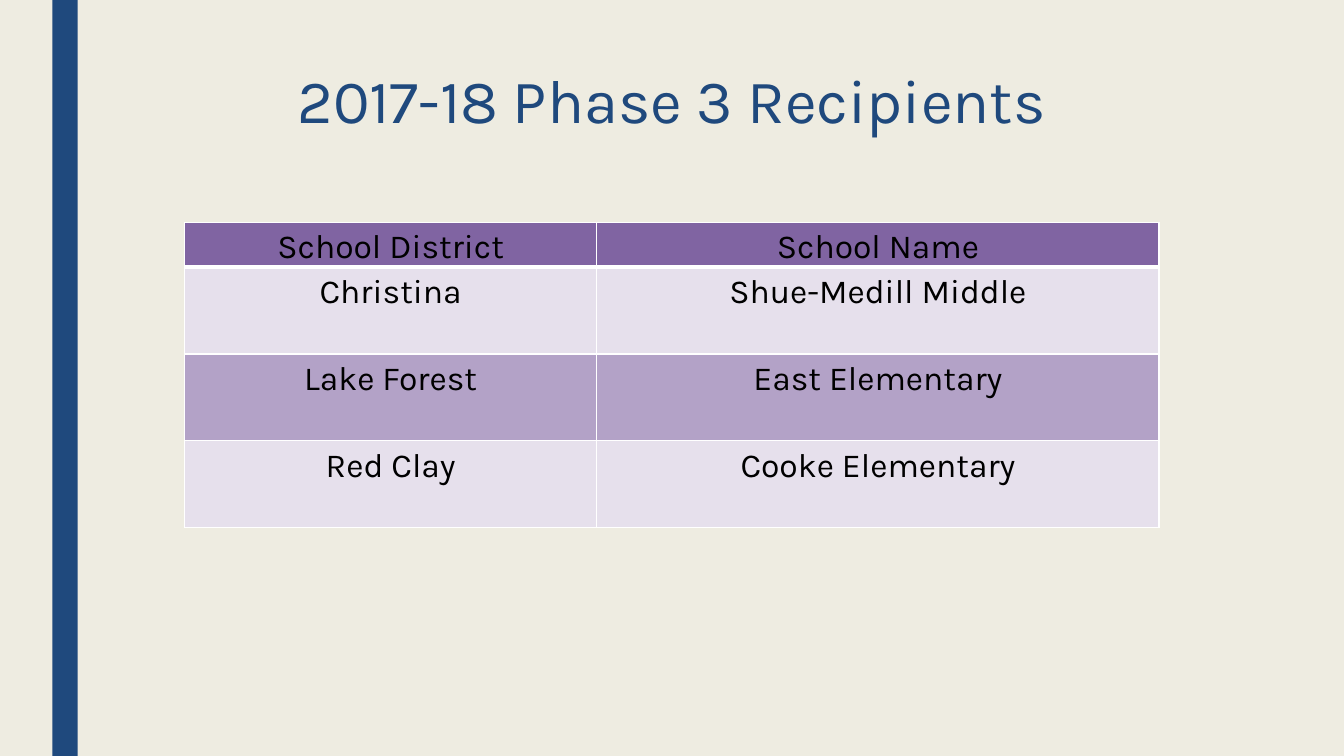
import pptx
import pptx.dml.color
import pptx.enum.shapes
import pptx.enum.text
import pptx.oxml
import pptx.oxml.ns
import pptx.util
from dataclasses import dataclass

Cm = pptx.util.Cm
Pt = pptx.util.Pt
CENTER = pptx.enum.text.PP_ALIGN.CENTER
TOP = pptx.enum.text.MSO_ANCHOR.TOP


@dataclass(frozen=True)
class Theme:
    font: str = "Karla"
    back: str = "EEECE1"
    navy: str = "1F497D"
    ink: str = "000000"
    rule: str = "FFFFFF"
    head: str = "8064A2"
    light: str = "E6E0EC"
    dark: str = "B3A2C7"
    title: int = 44
    body: int = 24


THEME = Theme()
ROWS = [
    ("School District", "School Name"),
    ("Christina", "Shue-Medill Middle"),
    ("Lake Forest", "East Elementary"),
    ("Red Clay", "Cooke Elementary"),
]


def paint(fill, color):
    fill.solid()
    fill.fore_color.rgb = pptx.dml.color.RGBColor.from_string(color)


def write(frame, text, size, color, space):
    frame.text = text
    line = frame.paragraphs[0]
    line.alignment = CENTER
    line.line_spacing = space
    font = line.runs[0].font
    font.name = THEME.font
    font.size = Pt(size)
    font.bold = False
    paint(font.fill, color)


def add_bar(slide, left, top, width, height):
    bar = slide.shapes.add_shape(
        pptx.enum.shapes.MSO_SHAPE.RECTANGLE, left, top, width, height)
    bar.shadow.inherit = False
    paint(bar.fill, THEME.navy)
    bar.line.fill.background()


def add_title(slide, left, top, width, height):
    title = slide.shapes.title
    title.left, title.top, title.width, title.height = left, top, width, height
    frame = title.text_frame
    write(frame, "2017-18 Phase 3 Recipients", THEME.title, THEME.navy, 0.89)
    frame.vertical_anchor = TOP
    frame.word_wrap = True


def add_rules(cell, base):
    """Border the cell; base is the width of its lower rule in points."""
    props = cell._tc.get_or_add_tcPr()
    sides = {"lnL": 1, "lnR": 1, "lnT": 1, "lnB": base}
    for place, (side, width) in enumerate(sides.items()):
        props.insert(place, pptx.oxml.parse_xml(
            f'<a:{side} {pptx.oxml.ns.nsdecls("a")} w="{Pt(width)}">'
            f'<a:solidFill><a:srgbClr val="{THEME.rule}"/></a:solidFill>'
            f'</a:{side}>'))


def add_grid(slide, left, top, width, height):
    grid = slide.shapes.add_table(
        len(ROWS), len(ROWS[0]), left, top, width, height).table
    grid.first_row = True
    grid.horz_banding = False

    # Column and row sizes
    first = Cm(10.39)
    grid.columns[0].width = first
    grid.columns[1].width = width - first
    head = Cm(1.13)
    grid.rows[0].height = head
    for row in list(grid.rows)[1:]:
        row.height = (height - head) // (len(ROWS) - 1)

    # Header, then alternating bands
    for r, texts in enumerate(ROWS):
        color = THEME.head if r == 0 else (THEME.dark, THEME.light)[r % 2]
        for c, text in enumerate(texts):
            cell = grid.cell(r, c)
            cell.margin_left = cell.margin_right = Cm(0.18)
            cell.margin_top = cell.margin_bottom = 0
            cell.vertical_anchor = TOP
            paint(cell.fill, color)
            add_rules(cell, 3 if r == 0 else 1)
            write(cell.text_frame, text, THEME.body, THEME.ink, 1.15)


def main():
    deck = pptx.Presentation()
    deck.slide_width, deck.slide_height = Cm(33.87), Cm(19.05)
    slide = deck.slides.add_slide(deck.slide_layouts[5])
    paint(slide.background.fill, THEME.back)
    add_bar(slide, Cm(1.32), 0, Cm(0.64), deck.slide_height)
    add_title(slide, Cm(5.51), Cm(1.65), Cm(22.86), Cm(3.18))
    add_grid(slide, Cm(4.65), Cm(5.6), Cm(24.56), Cm(7.69))
    deck.save("out.pptx")


if __name__ == "__main__":
    main()
